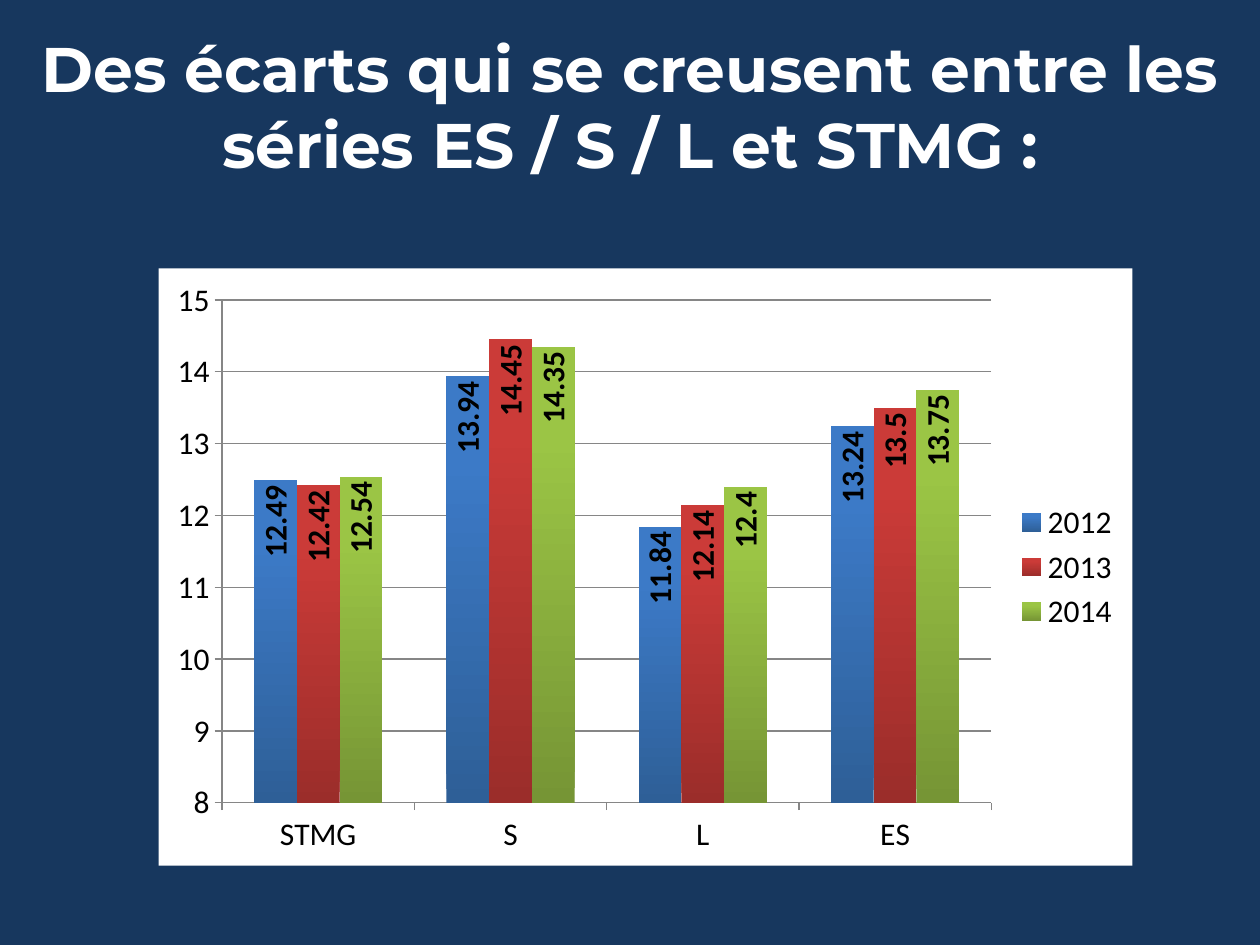
from lxml import etree
from pptx import Presentation
from pptx.chart.data import CategoryChartData
from pptx.dml.color import RGBColor
from pptx.enum.chart import XL_CHART_TYPE, XL_LABEL_POSITION, XL_LEGEND_POSITION, XL_TICK_MARK
from pptx.enum.text import MSO_ANCHOR, PP_ALIGN
from pptx.oxml import parse_xml
from pptx.oxml.ns import nsdecls
from pptx.util import Cm, Pt

CLUSTERED = XL_CHART_TYPE.COLUMN_CLUSTERED
INSIDE_END = XL_LABEL_POSITION.INSIDE_END
RIGHT = XL_LEGEND_POSITION.RIGHT
OUTSIDE = XL_TICK_MARK.OUTSIDE
MIDDLE = MSO_ANCHOR.MIDDLE
CENTER = PP_ALIGN.CENTER

COLORS = {
    "background": "17375E",
    "title": "FFFFFF",
    "chart": "FFFFFF",
    "text": "000000",
    "grid": "868686",
}
SERIES_GRADIENTS = {  # bottom, top
    "2012": ("2E5F97", "3C7AC7"),
    "2013": ("9B2D2A", "CB3B38"),
    "2014": ("769535", "9BC545"),
}
TRACKS = ["STMG", "S", "L", "ES"]
AVERAGES = {
    "2012": [12.49, 13.94, 11.84, 13.24],
    "2013": [12.42, 14.45, 12.14, 13.5],
    "2014": [12.54, 14.35, 12.4, 13.75],
}
PLOT_LAYOUT = {"x": 0.065, "y": 0.053, "w": 0.79, "h": 0.842}


def rgb(name):
    return RGBColor.from_string(COLORS.get(name, name))


class SlideBuilder:
    title_font = "Montserrat"
    chart_font = "Calibri"

    def __init__(self, presentation):
        self.slide = presentation.slides.add_slide(presentation.slide_layouts[5])
        fill = self.slide.background.fill
        fill.solid()
        fill.fore_color.rgb = rgb("background")

    def set_font(self, font, family, size, color, bold=False):
        font.name = family
        font.size = Pt(size)
        font.bold = bold
        font.color.rgb = rgb(color)

    def title(self, wording, left, top, width, height):
        title = self.slide.shapes.title
        title.left, title.top, title.width, title.height = left, top, width, height
        frame = title.text_frame
        frame.text = wording
        frame.word_wrap = True
        frame.vertical_anchor = MIDDLE
        heading = frame.paragraphs[0]
        heading.alignment = CENTER
        self.set_font(heading.runs[0].font, self.title_font, 36, "title", True)

    def column_chart(self, categories, values, left, top, width, height):
        data = CategoryChartData()
        data.categories = categories
        for name, numbers in values.items():
            data.add_series(name, numbers)
        chart = self.slide.shapes.add_chart(CLUSTERED, left, top, width, height, data).chart
        chart.has_title = False
        self.set_font(chart.font, self.chart_font, 18, "text")
        chart.has_legend = True
        chart.legend.position = RIGHT
        chart.legend.include_in_layout = False
        plot = chart.plots[0]
        plot.gap_width = 150
        plot.overlap = 0
        plot.vary_by_categories = False
        for series in plot.series:
            self.style_series(series)
        self.style_axes(chart)
        self.fill_chart_area(chart)
        self.place_plot(chart)

    def style_series(self, series):
        bottom, top = SERIES_GRADIENTS[series.name]
        fill = series.format.fill
        fill.gradient()
        fill.gradient_angle = 90
        for stop, color, position in zip(fill.gradient_stops, (bottom, top), (0, 0.8)):
            stop.color.rgb = rgb(color)
            stop.position = position
        labels = series.data_labels
        labels.show_value = True
        labels.position = INSIDE_END
        self.set_font(labels.font, self.chart_font, 18, "text", True)
        for body in series._element.xpath("c:dLbls/c:txPr/a:bodyPr"):
            body.set("rot", "-5400000")
            body.set("vert", "horz")

    def style_axes(self, chart):
        scale = chart.value_axis
        scale.minimum_scale, scale.maximum_scale, scale.major_unit = 8, 15, 1
        scale.has_major_gridlines = True
        for axis in (chart.category_axis, scale):
            axis.major_tick_mark = OUTSIDE
        for part in (chart.category_axis, scale, scale.major_gridlines):
            part.format.line.color.rgb = rgb("grid")
            part.format.line.width = Pt(0.75)

    def fill_chart_area(self, chart):
        area = parse_xml(
            f'<c:spPr {nsdecls("c", "a")}><a:solidFill><a:srgbClr val="{COLORS["chart"]}"/>'
            "</a:solidFill><a:ln><a:noFill/></a:ln></c:spPr>"
        )
        chart._chartSpace.xpath("c:chart")[0].addnext(area)

    def place_plot(self, chart):
        plot_area = chart._chartSpace.xpath("c:chart/c:plotArea")[0]
        for automatic in plot_area.xpath("c:layout"):
            plot_area.remove(automatic)
        layout = parse_xml(f'<c:layout {nsdecls("c")}><c:manualLayout/></c:layout>')
        settings = {"layoutTarget": "inner", "xMode": "edge", "yMode": "edge", **PLOT_LAYOUT}
        namespace = etree.QName(layout).namespace
        for tag, value in settings.items():
            etree.SubElement(layout[0], f"{{{namespace}}}{tag}").set("val", str(value))
        plot_area.insert(0, layout)


def main():
    presentation = Presentation()
    presentation.slide_width, presentation.slide_height = Cm(25.4), Cm(19.05)
    builder = SlideBuilder(presentation)
    builder.title(
        "Des écarts qui se creusent entre les séries ES / S / L et STMG :",
        Cm(0), Cm(0.53), Cm(25.4), Cm(3.18),
    )
    builder.column_chart(TRACKS, AVERAGES, Cm(3.2), Cm(5.41), Cm(19.63), Cm(12.04))
    presentation.save("out.pptx")


if __name__ == "__main__":
    main()
